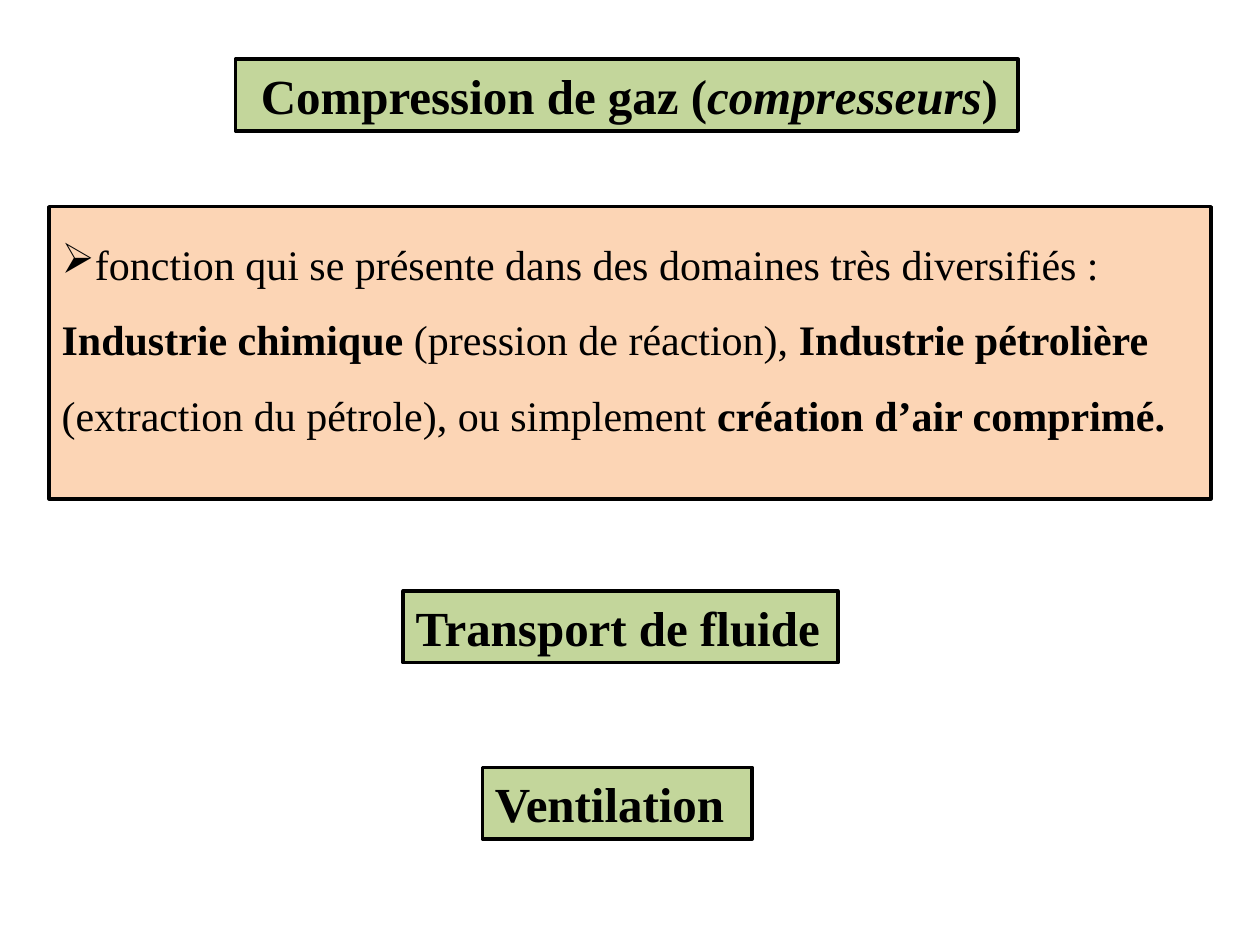
from lxml.etree import SubElement
from pptx import Presentation
from pptx.dml.color import RGBColor as Color
from pptx.enum.shapes import MSO_SHAPE as Preset
from pptx.enum.text import MSO_ANCHOR as Anchor, PP_ALIGN as Align
from pptx.oxml.ns import qn
from pptx.util import Inches, Pt

COLORS = {"heading": "C3D69B", "body": "FCD5B5", "ink": "000000"}
HEADING_HEIGHT = 0.57

presentation = Presentation()
presentation.slide_width, presentation.slide_height = Inches(10), Inches(7.5)
slide = presentation.slides.add_slide(presentation.slide_layouts[6])


def add_box(left, top, width, height, fill, size, runs):
    """Add an outlined box; each run is a text and its style: b, i, bi or empty."""
    shape = slide.shapes.add_shape(
        Preset.RECTANGLE, Inches(left), Inches(top), Inches(width), Inches(height))
    shape.shadow.inherit = False
    shape.fill.solid()
    shape.fill.fore_color.rgb = Color.from_string(COLORS[fill])
    shape.line.color.rgb = Color.from_string(COLORS["ink"])
    shape.line.width = Pt(2)
    shape.text_frame.word_wrap = True
    shape.text_frame.vertical_anchor = Anchor.MIDDLE
    paragraph = shape.text_frame.paragraphs[0]
    paragraph.alignment = Align.LEFT
    for text, style in runs:
        run = paragraph.add_run()
        run.text = text
        run.font.bold = "b" in style
        run.font.italic = "i" in style
        run.font.name = "Times New Roman"
        run.font.size = Pt(size)
        run.font.color.rgb = Color.from_string(COLORS["ink"])
    return shape


# Headings: left, top, width, runs
headings = [
    (1.87, 0.47, 6.21, [("Compression de gaz (", "b"), ("compresseurs", "bi"), (")", "b")]),
    (3.2, 4.69, 3.45, [("Transport de fluide", "b")]),
    (3.83, 6.09, 2.14, [("Ventilation", "b")]),
]
boxes = [add_box(left, top, width, HEADING_HEIGHT, "heading", 28, runs)
         for left, top, width, runs in headings]
boxes[0].text_frame.margin_left = Inches(0.2)

# Description of the compression function
description = add_box(0.39, 1.64, 9.22, 2.32, "body", 24, [
    ("fonction qui se présente dans des domaines très diversifiés : ", ""),
    ("Industrie chimique ", "b"),
    ("(pression de réaction), ", ""),
    ("Industrie pétrolière ", "b"),
    ("(extraction du pétrole), ou simplement ", ""),
    ("création d’air comprimé.", "b"),
])
description.text_frame.vertical_anchor = Anchor.TOP
paragraph = description.text_frame.paragraphs[0]
paragraph.line_spacing = 1.5
SubElement(paragraph._p.get_or_add_pPr(), qn("a:buChar"), char="➢")

presentation.save("out.pptx")
